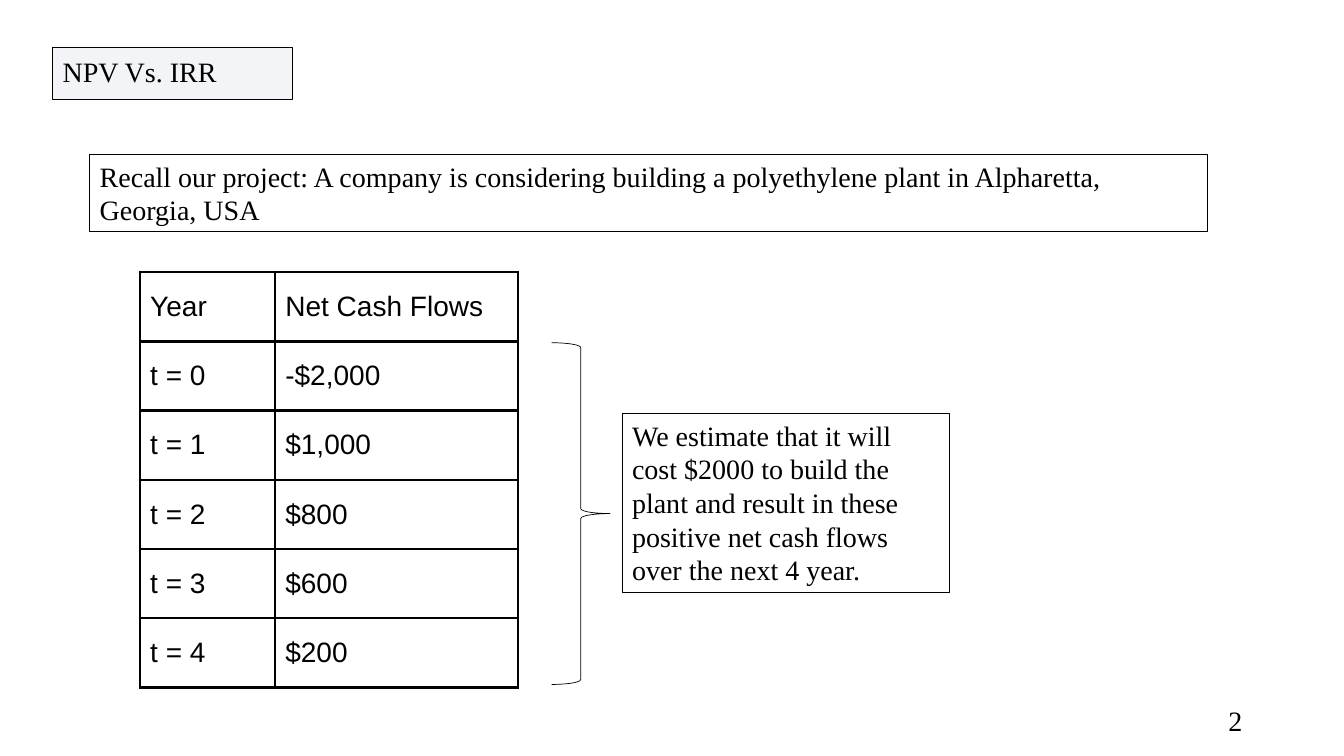
from lxml import etree
from pptx import Presentation
from pptx.dml import color
from pptx.enum import shapes, text
from pptx.oxml import ns
from pptx.util import Inches, Pt

SERIF = "Times New Roman"
BLACK = "000000"
FLOWS = [
    ("Year", "Net Cash Flows"),
    ("t = 0", "-$2,000"),
    ("t = 1", "$1,000"),
    ("t = 2", "$800"),
    ("t = 3", "$600"),
    ("t = 4", "$200"),
]


def paint(form, shade):
    form.rgb = color.RGBColor.from_string(shade)


def place(shape, box):
    shape.left, shape.top, shape.width, shape.height = map(Inches, box)


def write(frame, words, face=SERIF, align=text.PP_ALIGN.LEFT):
    frame.text = words
    for para in frame.paragraphs:
        para.alignment = align
        for run in para.runs:
            run.font.size = Pt(20)
            run.font.name = face
            paint(run.font.color, BLACK)


def outline(shape, width):
    paint(shape.line.color, BLACK)
    shape.line.width = Pt(width)


def title(slide, box):
    shape = slide.shapes.title
    place(shape, box)
    shape.fill.solid()
    paint(shape.fill.fore_color, "F2F4F7")
    outline(shape, 0.75)
    frame = shape.text_frame
    write(frame, "NPV Vs. IRR")
    frame.auto_size = text.MSO_AUTO_SIZE.NONE
    frame.vertical_anchor = text.MSO_ANCHOR.MIDDLE
    frame.paragraphs[0].line_spacing = 0.9


def note(slide, box, words):
    shape = slide.shapes.add_textbox(*map(Inches, box))
    outline(shape, 0.75)
    shape.text_frame.word_wrap = True
    write(shape.text_frame, words)


def border(cell):
    props = cell._tc.get_or_add_tcPr()
    for spot, side in enumerate(("lnL", "lnR", "lnT", "lnB")):
        line = etree.Element(ns.qn("a:" + side), w=str(Pt(2)))
        fill = etree.SubElement(line, ns.qn("a:solidFill"))
        etree.SubElement(fill, ns.qn("a:srgbClr"), val=BLACK)
        props.insert(spot, line)


def table(slide, box):
    grid = slide.shapes.add_table(len(FLOWS), 2, *map(Inches, box)).table
    grid.first_row = grid.horz_banding = False
    first = 1.34
    grid.columns[0].width = Inches(first)
    grid.columns[1].width = Inches(box[2] - first)
    for r, row in enumerate(FLOWS):
        for c, words in enumerate(row):
            cell = grid.cell(r, c)
            cell.fill.background()
            cell.vertical_anchor = text.MSO_ANCHOR.MIDDLE
            write(cell.text_frame, words, "Arial")
            border(cell)


def brace(slide, box):
    shape = slide.shapes.add_shape(shapes.MSO_SHAPE.RIGHT_BRACE, *map(Inches, box))
    shape.shadow.inherit = False
    shape.fill.background()
    outline(shape, 0.5)


def number(slide, box):
    frame = slide.shapes.add_textbox(*map(Inches, box)).text_frame
    frame.word_wrap = True
    frame.vertical_anchor = text.MSO_ANCHOR.MIDDLE
    write(frame, "2", align=text.PP_ALIGN.RIGHT)


def main():
    deck = Presentation()
    deck.slide_width, deck.slide_height = Inches(13.33), Inches(7.5)
    slide = deck.slides.add_slide(deck.slide_layouts[5])
    title(slide, (0.52, 0.47, 2.38, 0.52))
    note(slide, (0.89, 1.53, 11.09, 0.77),
         "Recall our project: A company is considering building a "
         "polyethylene plant in Alpharetta, Georgia, USA")
    table(slide, (1.39, 2.7, 3.75, 4.12))
    brace(slide, (5.47, 3.4, 0.58, 3.39))
    note(slide, (6.17, 4.1, 3.25, 1.78),
         "We estimate that it will cost $2000 to build the plant and result "
         "in these positive net cash flows over the next 4 year.")
    number(slide, (9.42, 6.95, 3, 0.4))
    deck.save("out.pptx")


if __name__ == "__main__":
    main()
